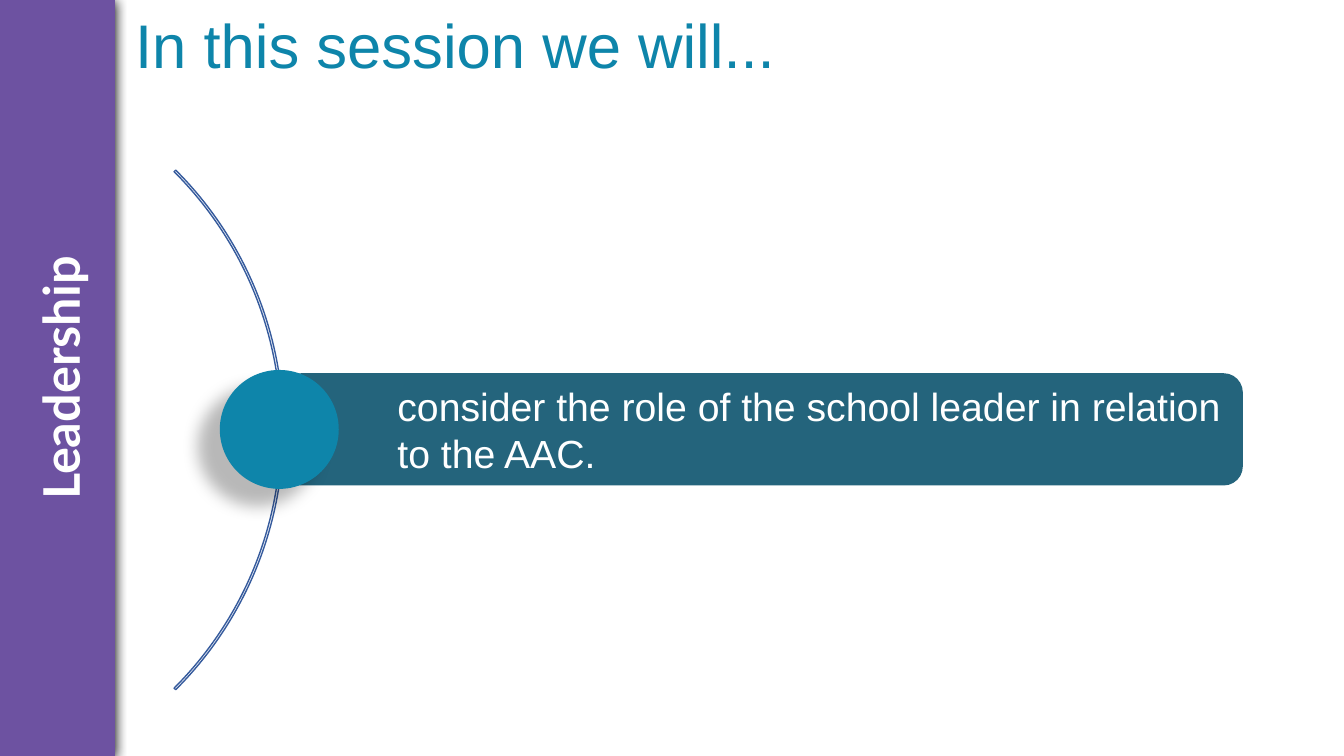
import pptx
import pptx.util
import pptx.dml.color
import pptx.enum.shapes
import pptx.enum.text
import pptx.oxml
import pptx.oxml.ns

Inches = pptx.util.Inches
Pt = pptx.util.Pt
RGBColor = pptx.dml.color.RGBColor
Shape = pptx.enum.shapes.MSO_SHAPE
Anchor = pptx.enum.text.MSO_ANCHOR
Align = pptx.enum.text.PP_ALIGN

TEAL = RGBColor(0x0E, 0x85, 0xAA)
DARK_TEAL = RGBColor(0x24, 0x64, 0x7C)
PURPLE = RGBColor(0x6D, 0x52, 0xA1)
ARC_BLUE = RGBColor(0x36, 0x5B, 0x9D)
WHITE = RGBColor(0xFF, 0xFF, 0xFF)


def place(shape, left, top, width, height):
    shape.left, shape.top = Inches(left), Inches(top)
    shape.width, shape.height = Inches(width), Inches(height)


def add_run(paragraph, text, size, font, color, bold=False):
    run = paragraph.add_run()
    run.text = text
    run.font.size = Pt(size)
    run.font.name = font
    run.font.color.rgb = color
    run.font.bold = bold
    return run


def add_shape(slide, kind, box, fill=None, line=None):
    shape = slide.shapes.add_shape(kind, *(Inches(length) for length in box))
    shape.shadow.inherit = False
    if fill is None:
        shape.fill.background()
    else:
        shape.fill.solid()
        shape.fill.fore_color.rgb = fill
    if line is None:
        shape.line.fill.background()
    else:
        shape.line.color.rgb = line
        shape.line.width = Pt(1)
    return shape


def add_shadow(shape, opacity, blur, distance, angle):
    effects = shape._element.spPr.find(pptx.oxml.ns.qn("a:effectLst"))
    effects.append(pptx.oxml.parse_xml(
        f'<a:outerShdw {pptx.oxml.ns.nsdecls("a")} blurRad="{Pt(blur)}" '
        f'dist="{Pt(distance)}" dir="{angle * 60000}" algn="ctr" rotWithShape="0">'
        f'<a:srgbClr val="000000"><a:alpha val="{opacity * 1000}"/></a:srgbClr>'
        '</a:outerShdw>'))


def add_title(slide, text):
    title = slide.shapes.title
    place(title, 1.24, 0.1, 11.5, 1.45)
    title.text_frame.vertical_anchor = Anchor.TOP
    title.text_frame.word_wrap = True
    paragraph = title.text_frame.paragraphs[0]
    paragraph.alignment = Align.LEFT
    paragraph.line_spacing = 0.9
    add_run(paragraph, text, 44, "Arial", TEAL)


def add_sidebar(slide, text):
    band = add_shape(slide, Shape.RECTANGLE, (0, 0, 1.14, 7.5), PURPLE)
    add_shadow(band, 100, 8.5, 1, 90)
    label = slide.shapes.add_textbox(
        Inches(-1.59), Inches(3.45), Inches(4.32), Inches(0.6))
    label.rotation = 270
    frame = label.text_frame
    frame.word_wrap = True
    frame.margin_left = frame.margin_right = frame.margin_bottom = 0
    frame.margin_top = Inches(0.01)
    paragraph = frame.paragraphs[0]
    paragraph.alignment = Align.CENTER
    paragraph.line_spacing = 1.02
    add_run(paragraph, text, 36, "Lato", WHITE, bold=True)


def add_goal(slide, text):
    bar = add_shape(slide, Shape.ROUNDED_RECTANGLE, (2.81, 3.71, 9.51, 1.1),
                    DARK_TEAL, DARK_TEAL)
    frame = bar.text_frame
    frame.word_wrap = True
    frame.vertical_anchor = Anchor.MIDDLE
    paragraph = frame.paragraphs[0]
    paragraph.alignment = Align.LEFT
    paragraph._p.get_or_add_pPr().set("marL", str(Inches(0.98)))
    add_run(paragraph, text, 28, "Arial", WHITE)

    # Thin arc from 315 to 45 degrees, with a disc where it meets the bar
    arc = add_shape(slide, Shape.BLOCK_ARC, (-4.48, 0.62, 7.29, 7.29), line=ARC_BLUE)
    for index, value in enumerate((189, 27, 0.003)):
        arc.adjustments[index] = value
    disc = add_shape(slide, Shape.OVAL, (2.18, 3.67, 1.18, 1.18), TEAL)
    add_shadow(disc, 28, 11.8, 19.7, 141)


def main():
    presentation = pptx.Presentation()
    presentation.slide_width = Inches(13.33)
    presentation.slide_height = Inches(7.5)
    slide = presentation.slides.add_slide(presentation.slide_layouts[5])
    add_title(slide, "In this session we will...")
    add_sidebar(slide, "Leadership")
    add_goal(slide, "consider the role of the school leader in relation to the AAC.")
    presentation.save("out.pptx")


if __name__ == "__main__":
    main()
